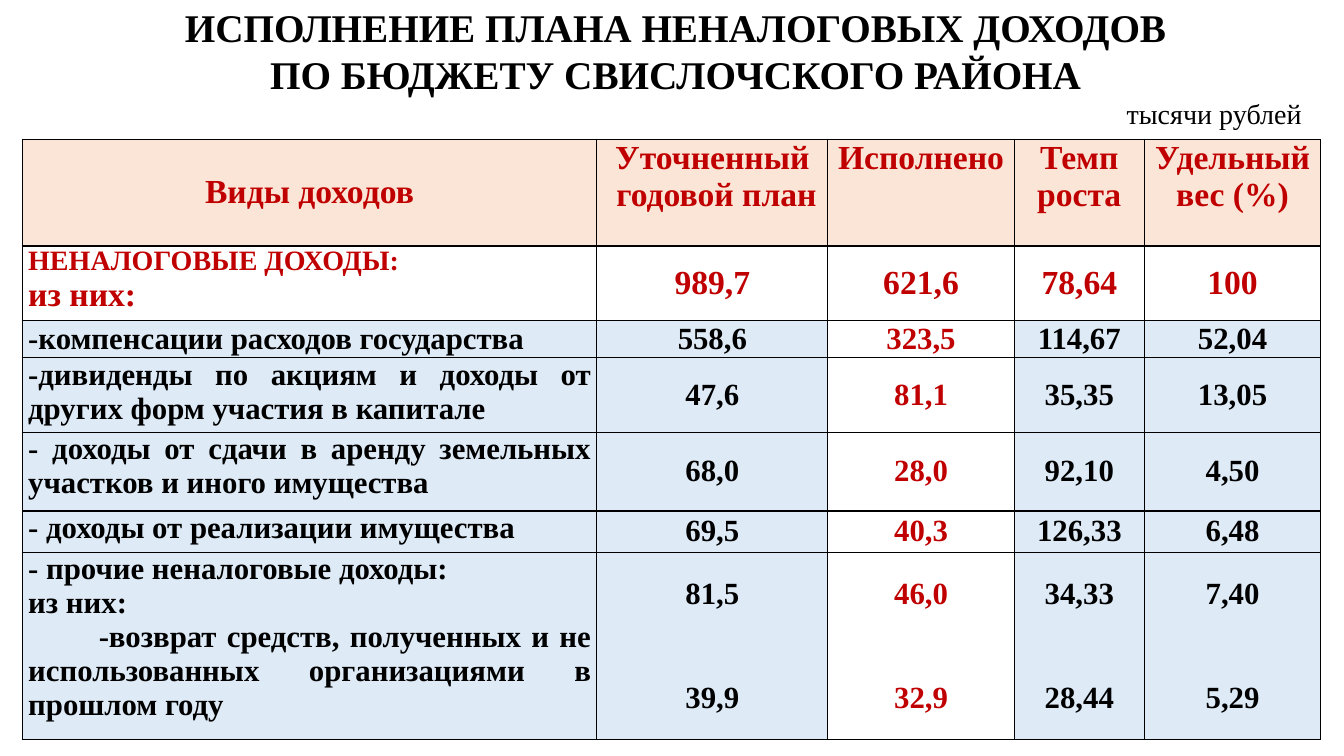
from lxml import etree
from pptx import Presentation
from pptx.dml.color import RGBColor
from pptx.enum.text import MSO_ANCHOR, PP_ALIGN
from pptx.oxml.ns import qn
from pptx.util import Emu, Pt

CENTER, RIGHT, JUSTIFY = PP_ALIGN.CENTER, PP_ALIGN.RIGHT, PP_ALIGN.JUSTIFY
TOP, MIDDLE = MSO_ANCHOR.TOP, MSO_ANCHOR.MIDDLE
BLACK = RGBColor(0x00, 0x00, 0x00)
WHITE = RGBColor(0xFF, 0xFF, 0xFF)
RED = RGBColor(0xC0, 0x00, 0x00)
PEACH = RGBColor(0xFB, 0xE5, 0xD6)
PALE_BLUE = RGBColor(0xDE, 0xEB, 0xF7)
FONT = "Times New Roman"
TITLE_ONLY = 5
DONE_COLUMN = 2

COLUMN_WIDTHS = [570, 229, 185, 129, 175]
ROW_HEIGHTS = [106, 74, 37, 74, 78, 41, 186]
HEADERS = ["Виды доходов", "Уточненный\n годовой план", "Исполнено",
           "Темп роста", "Удельный вес (%)"]
TOTALS = ["НЕНАЛОГОВЫЕ ДОХОДЫ:\nиз них:", "989,7", "621,6", "78,64", "100"]
INCOMES = [
    ["-компенсации расходов государства", "558,6", "323,5", "114,67", "52,04"],
    ["-дивиденды по акциям и доходы от других форм участия в капитале",
     "47,6", "81,1", "35,35", "13,05"],
    ["- доходы от сдачи в аренду земельных участков и иного имущества",
     "68,0", "28,0", "92,10", "4,50"],
    ["- доходы от реализации имущества", "69,5", "40,3", "126,33", "6,48"],
    ["- прочие неналоговые доходы:\nиз них:\n-возврат средств, полученных и не "
     "использованных организациями в прошлом году",
     "81,5\n39,9", "46,0\n32,9", "34,33\n28,44", "7,40\n5,29"],
]


def px(length):
    """Turn a length in px, 100 to the inch, into EMU."""
    return Emu(length * 9144)


def write_text(frame, text, size, color=BLACK, bold=True, align=CENTER, gap=0):
    """Write each line of text as a paragraph, with gap points between them."""
    frame.word_wrap = True
    for index, line in enumerate(text.split("\n")):
        paragraph = frame.add_paragraph() if index else frame.paragraphs[0]
        paragraph.alignment = align
        paragraph.line_spacing = 1.0
        paragraph.space_before = Pt(gap if index else 0)
        run = paragraph.add_run()
        run.text = line
        run.font.name = FONT
        run.font.size = Pt(size)
        run.font.bold = bold
        run.font.color.rgb = color


def format_cell(cell, fill, anchor):
    """Set the fill, insets, anchor and black borders of a cell."""
    properties = cell._tc.get_or_add_tcPr()
    for side in ("a:lnL", "a:lnR", "a:lnT", "a:lnB"):
        line = etree.SubElement(properties, qn(side), w=str(Pt(1)))
        solid = etree.SubElement(line, qn("a:solidFill"))
        etree.SubElement(solid, qn("a:srgbClr"), val=str(BLACK))
    cell.fill.solid()
    cell.fill.fore_color.rgb = fill
    cell.vertical_anchor = anchor
    cell.margin_left = cell.margin_right = px(6)
    cell.margin_top = cell.margin_bottom = 0


def add_heading(slide, left, top, width, height):
    """Place the title and, at the right below it, the unit of measure."""
    title = slide.shapes.title
    title.left, title.top, title.width, title.height = map(
        px, (left, top, width, height))
    unit = slide.shapes.add_textbox(
        px(left + width - 320), px(top + height - 4), px(300), px(32))
    for shape in (title, unit):
        frame = shape.text_frame
        frame.margin_left = frame.margin_right = 0
        frame.margin_top = frame.margin_bottom = 0
    title.text_frame.vertical_anchor = MIDDLE
    write_text(title.text_frame, "ИСПОЛНЕНИЕ ПЛАНА НЕНАЛОГОВЫХ ДОХОДОВ\n"
               "ПО БЮДЖЕТУ СВИСЛОЧСКОГО РАЙОНА", 28)
    write_text(unit.text_frame, "тысячи рублей", 20, bold=False, align=RIGHT)


def add_income_table(slide, left, top):
    """Place the income table with its header, total and income rows."""
    rows = [HEADERS, TOTALS, *INCOMES]
    table = slide.shapes.add_table(
        len(rows), len(HEADERS), px(left), px(top),
        px(sum(COLUMN_WIDTHS)), px(sum(ROW_HEIGHTS))).table
    for column, width in zip(table.columns, COLUMN_WIDTHS):
        column.width = px(width)
    for row, height in zip(table.rows, ROW_HEIGHTS):
        row.height = px(height)

    for column, text in enumerate(HEADERS):
        cell = table.cell(0, column)
        format_cell(cell, PEACH, TOP if column else MIDDLE)
        write_text(cell.text_frame, text, 24, RED)

    for column, text in enumerate(TOTALS):
        cell = table.cell(1, column)
        format_cell(cell, WHITE, MIDDLE if column else TOP)
        write_text(cell.text_frame, text, 24, RED,
                   align=CENTER if column else JUSTIFY)
    table.cell(1, 0).text_frame.paragraphs[0].runs[0].font.size = Pt(20)

    for row, values in enumerate(INCOMES, start=2):
        for column, text in enumerate(values):
            cell = table.cell(row, column)
            done = column == DONE_COLUMN
            one_line_label = row == 2
            format_cell(cell, WHITE if done else PALE_BLUE,
                        MIDDLE if column or one_line_label else TOP)
            write_text(cell.text_frame, text, 22, RED if done else BLACK,
                       align=CENTER if column else JUSTIFY,
                       gap=50 if column else 0)
    refund = table.cell(len(rows) - 1, 0).text_frame.paragraphs[-1]
    refund._p.get_or_add_pPr().set("indent", str(px(70)))


def main():
    """Build the slide and save it."""
    presentation = Presentation()
    presentation.slide_width, presentation.slide_height = px(1333), px(750)
    slide = presentation.slides.add_slide(
        presentation.slide_layouts[TITLE_ONLY])
    add_heading(slide, 29, 0, 1282, 100)
    add_income_table(slide, 22, 138)
    presentation.save("out.pptx")


if __name__ == "__main__":
    main()
